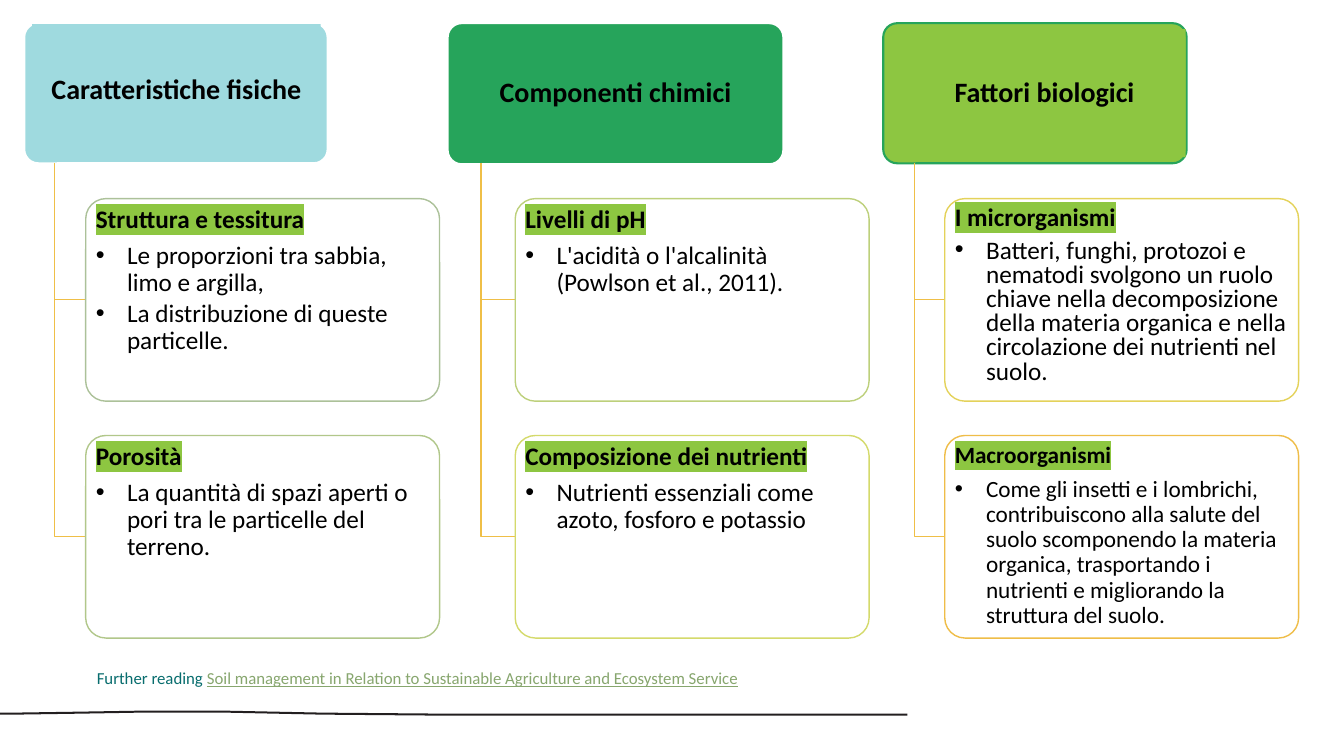
import pptx
import pptx.util
import pptx.dml.color
import pptx.enum.shapes
import pptx.enum.text
import pptx.oxml.ns
import lxml.etree

Inches = pptx.util.Inches
Pt = pptx.util.Pt
SHAPE = pptx.enum.shapes.MSO_SHAPE
ANCHOR = pptx.enum.text.MSO_ANCHOR
ALIGN = pptx.enum.text.PP_ALIGN
qn = pptx.oxml.ns.qn

HEX = {
    "black": "000000", "white": "FFFFFF", "aqua": "9FDADF",
    "green": "26A45B", "lime": "8DC641", "gold": "EFBF47",
    "teal": "086D6E", "link": "87A66E", "ink": "231F20",
    "sage": "ACC199", "moss": "B1C78A", "olive": "BDD07B",
    "pear": "D4DA6B", "straw": "E4D25A", "amber": "EFBD48",
}

COLS = [
    {"head": "Caratteristiche fisiche", "fill": "aqua", "edge": "white",
     "at": (0.24, 0.23, 3.01, 1.39), "label": (0.32, 0.24, 2.86, 1.31), "stem": 0.54,
     "cards": [
         {"title": "Struttura e tessitura", "edge": "sage",
          "items": ["Le proporzioni tra sabbia, limo e argilla,",
                    "La distribuzione di queste particelle."]},
         {"title": "Porosità", "edge": "moss",
          "items": ["La quantità di spazi aperti o pori tra le particelle del terreno."]}]},
    {"head": "Componenti chimici", "fill": "green", "edge": "white",
     "at": (4.44, 0.23, 3.33, 1.4), "label": (4.54, 0.27, 3.13, 1.32), "stem": 4.77,
     "cards": [
         {"title": "Livelli di pH", "edge": "olive",
          "items": ["L'acidità o l'alcalinità (Powlson et al., 2011)."]},
         {"title": "Composizione dei nutrienti", "edge": "pear",
          "items": ["Nutrienti essenziali come azoto, fosforo e potassio"]}]},
    {"head": "Fattori biologici", "fill": "lime", "edge": "green",
     "at": (8.76, 0.23, 3.01, 1.39), "label": (8.96, 0.29, 2.8, 1.27), "stem": 9.07,
     "cards": [
         {"title": "I microrganismi", "edge": "straw", "lead": 0.8,
          "items": ["Batteri, funghi, protozoi e nematodi svolgono un ruolo chiave nella "
                    "decomposizione della materia organica e nella circolazione dei "
                    "nutrienti nel suolo."]},
         {"title": "Macroorganismi", "edge": "amber", "size": 16.6, "wide": 3.44,
          "items": ["Come gli insetti e i lombrichi, contribuiscono alla salute del suolo "
                    "scomponendo la materia organica, trasportando i nutrienti e "
                    "migliorando la struttura del suolo."]}]},
]

WAVE = [(0, 7.07), (0.14, 7.07), (0.8, 7.06), (1.4, 7.05), (2.23, 7.05),
        (3.2, 7.07), (4.43, 7.08), (9, 7.08)]


def rgb(name):
    return pptx.dml.color.RGBColor.from_string(HEX[name])


def paint(shape, fill=None, edge=None, width=1):
    shape.shadow.inherit = False
    if fill:
        shape.fill.solid()
        shape.fill.fore_color.rgb = rgb(fill)
    else:
        shape.fill.background()
    if edge:
        shape.line.color.rgb = rgb(edge)
        shape.line.width = Pt(width)
    else:
        shape.line.fill.background()


def block(slide, kind, box, fill, edge=None, width=1):
    shape = slide.shapes.add_shape(kind, *map(Inches, box))
    if kind == SHAPE.ROUNDED_RECTANGLE:
        shape.adjustments[0] = 0.1
    paint(shape, fill, edge, width)
    return shape


def trace(slide, points, fill=None, edge=None):
    spots = [(Inches(x), Inches(y)) for x, y in points]
    pen = slide.shapes.build_freeform(*spots[0])
    pen.add_line_segments(spots[1:], close=bool(fill))
    paint(pen.convert_to_shape(), fill, edge)


def frame(shape, anchor, left=0.04, side=0.04):
    area = shape.text_frame
    area.word_wrap = True
    area.vertical_anchor = anchor
    area.margin_left, area.margin_right = Inches(left), Inches(side)
    area.margin_top = area.margin_bottom = Inches(0.02)
    return area


def write(para, text, size, color="black", bold=False, mark=None, under=False):
    run = para.add_run()
    run.text = text
    font = run.font
    font.name, font.size, font.bold = "Calibri", Pt(size), bold
    font.color.rgb = rgb(color)
    if under:
        font.underline = True
    if mark:
        glow = lxml.etree.Element(qn("a:highlight"))
        lxml.etree.SubElement(glow, qn("a:srgbClr")).set("val", HEX[mark])
        run._r.rPr.find(qn("a:solidFill")).addnext(glow)


def indent(para, size):
    para.level = 1
    props = para._p.get_or_add_pPr()
    props.set("marL", str(Inches(size)))
    props.set("indent", str(-Inches(size)))
    return props


def bullet(para):
    props = indent(para, 0.31)
    tint = lxml.etree.SubElement(props, qn("a:buClr"))
    lxml.etree.SubElement(tint, qn("a:srgbClr")).set("val", HEX["black"])
    lxml.etree.SubElement(props, qn("a:buFont")).set("typeface", "Arial")
    lxml.etree.SubElement(props, qn("a:buChar")).set("char", "•")


def header(slide, col):
    block(slide, SHAPE.ROUNDED_RECTANGLE, col["at"], col["fill"], col["edge"], 1.5)
    label = block(slide, SHAPE.RECTANGLE, col["label"], col["fill"])
    para = frame(label, ANCHOR.MIDDLE).paragraphs[0]
    para.alignment = ALIGN.CENTER
    para.line_spacing = 0.9
    write(para, col["head"], 20, bold=True)


def card(slide, data, left, top, stem):
    size, lead = data.get("size", 18), data.get("lead", 0.9)
    mid = top + 1
    trace(slide, [(stem, 1.62), (stem, mid), (left, mid)], edge="gold")
    box = block(slide, SHAPE.ROUNDED_RECTANGLE, (left, top, 3.51, 2.01), "white", data["edge"])
    clear = box._element.spPr.find(qn("a:solidFill"))[0]
    lxml.etree.SubElement(clear, qn("a:alpha")).set("val", "89000")
    place = (left + 0.06, top + 0.06, data.get("wide", 3.38), 1.89)
    area = frame(slide.shapes.add_textbox(*map(Inches, place)), ANCHOR.TOP)
    para = area.paragraphs[0]
    para.line_spacing = lead
    write(para, data["title"], size, bold=True, mark="lime")
    for i, item in enumerate(data["items"]):
        para = area.add_paragraph()
        bullet(para)
        para.line_spacing = lead
        para.space_before = Pt(2.7 if i else 6.3)
        write(para, item, size)


def footer(slide):
    shape = slide.shapes.add_textbox(*map(Inches, (0.52, 6.27, 8.24, 0.83)))
    para = frame(shape, ANCHOR.MIDDLE, 0.19, 0.02).paragraphs[0]
    indent(para, 0.25)
    para.line_spacing = 0.9
    write(para, "\t", 24, "teal")
    write(para, "Further reading ", 12, "teal")
    write(para, "Soil management in Relation to Sustainable Agriculture and Ecosystem Service",
          12, "link", under=True)


def main():
    deck = pptx.Presentation()
    deck.slide_width, deck.slide_height = Inches(13.33), Inches(7.5)
    slide = deck.slides.add_slide(deck.slide_layouts[6])
    under = [(x, y + 0.02) for x, y in reversed(WAVE)]
    trace(slide, WAVE + under, fill="ink")
    for i, col in enumerate(COLS):
        header(slide, col)
        for j, data in enumerate(col["cards"]):
            card(slide, data, 0.85 + 4.26 * i, 1.97 + 2.35 * j, col["stem"])
    footer(slide)
    deck.save("out.pptx")


if __name__ == "__main__":
    main()
